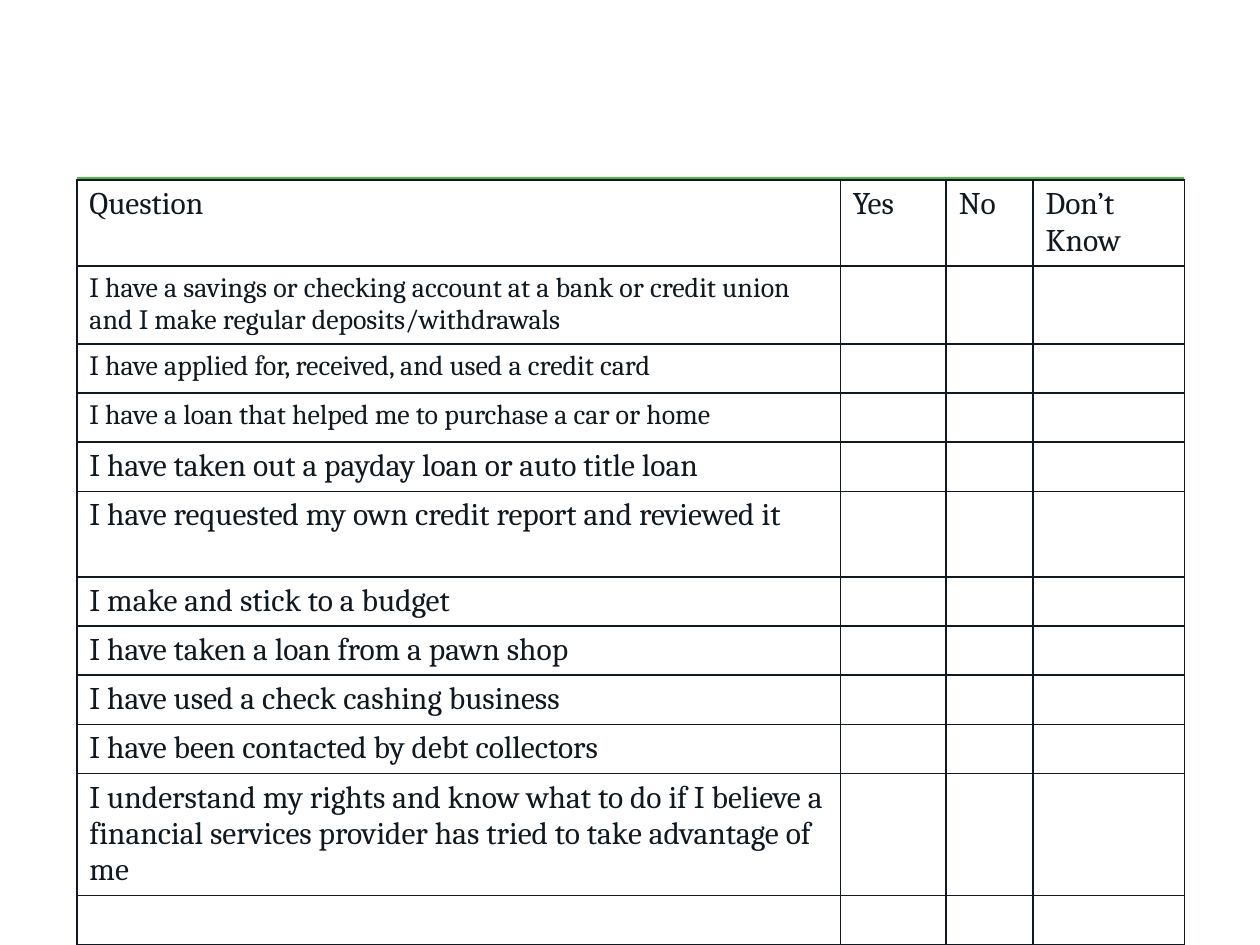
"""Build a slide with a yes/no questionnaire table on personal finance habits."""
from lxml import etree
from pptx import Presentation
from pptx.dml.color import RGBColor
from pptx.enum.shapes import MSO_CONNECTOR
from pptx.oxml.ns import qn
from pptx.util import Inches, Pt

STRAIGHT = MSO_CONNECTOR.STRAIGHT
INK = RGBColor(0x10, 0x18, 0x20)
GREEN = RGBColor(0x50, 0xB7, 0x48)
FONT = "Cambria"

HEADINGS = ["Question", "Yes", "No", "Don’t Know"]
COLUMN_WIDTHS = [6.06, 0.84, 0.69, 1.2]
HEADING_HEIGHT = 0.68
QUESTIONS = [
    ("I have a savings or checking account at a bank or credit union "
     "and I make regular deposits/withdrawals", 16, 0.62),
    ("I have applied for, received, and used a credit card", 16, 0.39),
    ("I have a loan that helped me to purchase a car or home", 16, 0.39),
    ("I have taken out a payday loan or auto title loan", 18, 0.39),
    ("I have requested my own credit report and reviewed it", 18, 0.68),
    ("I make and stick to a budget", 18, 0.39),
    ("I have taken a loan from a pawn shop", 18, 0.39),
    ("I have used a check cashing business", 18, 0.39),
    ("I have been contacted by debt collectors", 18, 0.39),
    ("I understand my rights and know what to do if I believe a financial "
     "services provider has tried to take advantage of me", 18, 0.97),
    ("", 18, 0.39),
]
LEFT, TOP = 0.61, 1.43
RULE_Y = 1.42


def add_rule(slide):
    right = LEFT + sum(COLUMN_WIDTHS)
    rule = slide.shapes.add_connector(
        STRAIGHT, Inches(LEFT), Inches(RULE_Y), Inches(right), Inches(RULE_Y))
    rule.line.color.rgb = GREEN
    rule.line.width = Pt(2)
    etree.SubElement(rule._element.spPr, qn("a:effectLst"))


def style_cell(cell):
    properties = cell._tc.get_or_add_tcPr()
    for side in ("a:lnL", "a:lnR", "a:lnT", "a:lnB"):
        border = etree.SubElement(properties, qn(side), w=str(Pt(1)))
        fill = etree.SubElement(border, qn("a:solidFill"))
        etree.SubElement(fill, qn("a:srgbClr"), val=str(INK))
    cell.fill.background()


def write_cell(cell, text, size):
    if not text:
        cell.margin_top = cell.margin_bottom = 0
        return
    run = cell.text_frame.paragraphs[0].add_run()
    run.text = text
    run.font.name = FONT
    run.font.size = Pt(size)
    run.font.color.rgb = INK


def add_questionnaire(slide):
    rows = [(HEADINGS, 18, HEADING_HEIGHT)]
    blanks = [""] * (len(HEADINGS) - 1)
    rows += [([question] + blanks, size, height) for question, size, height in QUESTIONS]
    table = slide.shapes.add_table(
        len(rows), len(HEADINGS), Inches(LEFT), Inches(TOP),
        Inches(sum(COLUMN_WIDTHS)), Inches(sum(row[2] for row in rows))).table
    table.first_row = table.horz_banding = False
    for column, width in zip(table.columns, COLUMN_WIDTHS):
        column.width = Inches(width)
    for table_row, (texts, size, height) in zip(table.rows, rows):
        table_row.height = Inches(height)
        for cell, text in zip(table_row.cells, texts):
            style_cell(cell)
            write_cell(cell, text, size)


def main():
    presentation = Presentation()
    presentation.slide_width = Inches(10)
    presentation.slide_height = Inches(7.5)
    slide = presentation.slides.add_slide(presentation.slide_layouts[6])
    add_rule(slide)
    add_questionnaire(slide)
    presentation.save("out.pptx")


if __name__ == "__main__":
    main()
